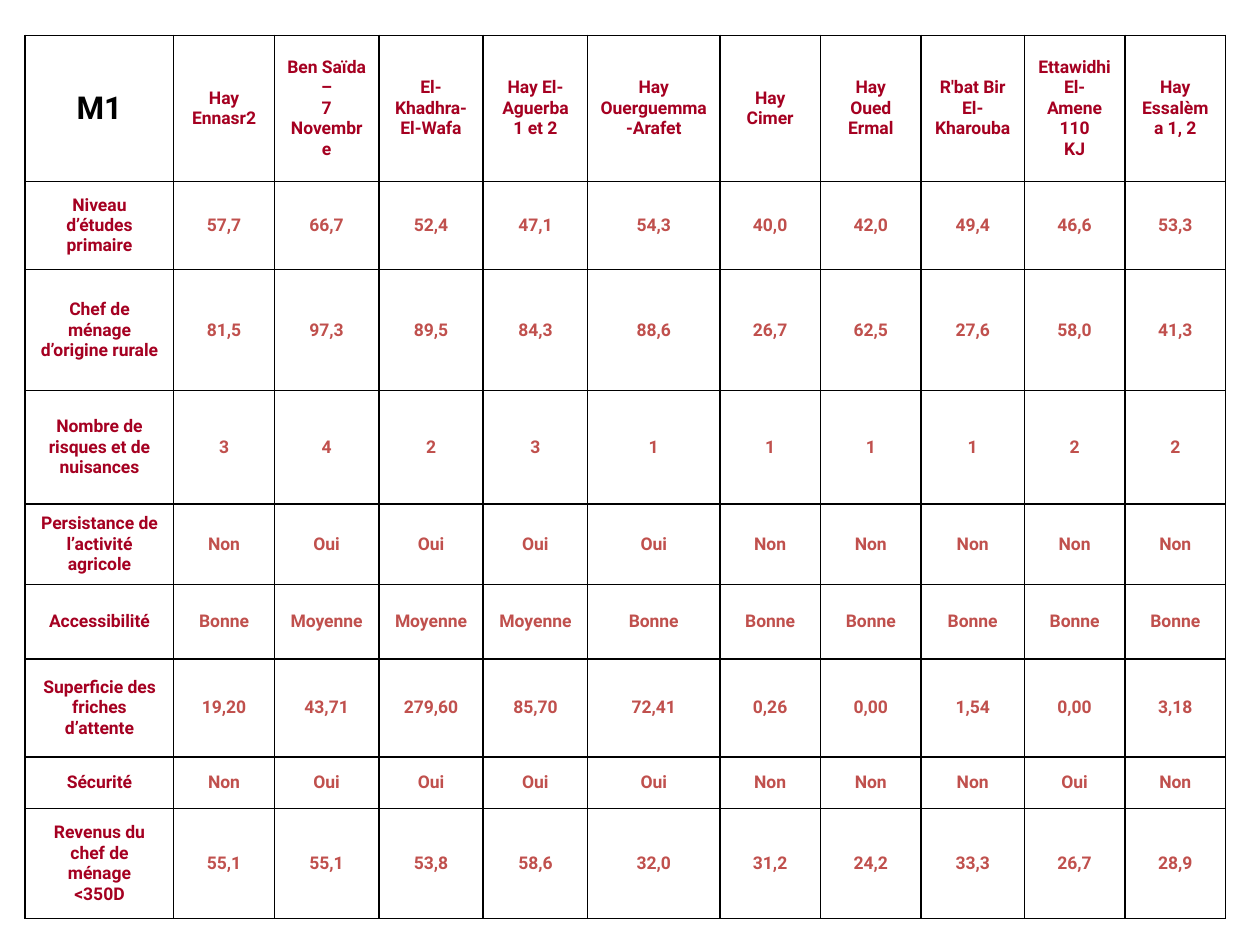
from lxml import etree
from pptx import Presentation
from pptx.dml.color import RGBColor
from pptx.enum.text import MSO_ANCHOR, PP_ALIGN
from pptx.oxml.ns import qn
from pptx.util import Inches, Pt

CENTER = PP_ALIGN.CENTER
MIDDLE = MSO_ANCHOR.MIDDLE
FONT = "Roboto"
COLORS = {"title": "000000", "head": "A50021", "value": "C0504D", "line": "000000"}

WIDTHS = [1.18, 0.8, 0.83, 0.83, 0.83, 1.05, 0.8, 0.8, 0.82, 0.8, 0.8]
HEIGHTS = [1.16, 0.7, 0.96, 0.9, 0.64, 0.59, 0.78, 0.41, 0.87]
AREAS = [
    "M1", "Hay Ennasr2", "Ben Saïda –\n7 Novembre", "El-Khadhra- El-Wafa",
    "Hay El-Aguerba 1 et 2", "Hay Ouerguemma -Arafet", "Hay Cimer",
    "Hay Oued Ermal", "R'bat Bir El-Kharouba", "Ettawidhi\nEl-Amene\n110\nKJ",
    "Hay Essalèma 1, 2",
]
FACTS = {
    "Niveau d’études primaire": "57,7 66,7 52,4 47,1 54,3 40,0 42,0 49,4 46,6 53,3",
    "Chef de ménage d’origine rurale": "81,5 97,3 89,5 84,3 88,6 26,7 62,5 27,6 58,0 41,3",
    "Nombre de risques et de nuisances": "3 4 2 3 1 1 1 1 2 2",
    "Persistance de l’activité agricole": "Non Oui Oui Oui Oui Non Non Non Non Non",
    "Accessibilité": "Bonne Moyenne Moyenne Moyenne Bonne Bonne Bonne Bonne Bonne Bonne",
    "Superficie des friches d’attente": "19,20 43,71 279,60 85,70 72,41 0,26 0,00 1,54 0,00 3,18",
    "Sécurité": "Non Oui Oui Oui Oui Non Non Non Oui Non",
    "Revenus du chef de ménage\n<350D": "55,1 55,1 53,8 58,6 32,0 31,2 24,2 33,3 26,7 28,9",
}


def add_lines(cell):
    props = cell._tc.get_or_add_tcPr()
    for place, side in enumerate(("lnL", "lnR", "lnT", "lnB")):
        line = etree.Element(qn(f"a:{side}"), w=str(Pt(1)))
        fill = etree.SubElement(line, qn("a:solidFill"))
        etree.SubElement(fill, qn("a:srgbClr"), val=COLORS["line"])
        props.insert(place, line)


def fill_cell(cell, text, size, color):
    cell.text_frame.text = text
    cell.vertical_anchor = MIDDLE
    cell.fill.background()
    add_lines(cell)
    for para in cell.text_frame.paragraphs:
        para.alignment = CENTER
        for run in para.runs:
            run.font.name = FONT
            run.font.size = Pt(size)
            run.font.bold = True
            run.font.color.rgb = RGBColor.from_string(COLORS[color])


def add_grid(slide, left, top, width, height):
    rows = [AREAS] + [[name] + values.split() for name, values in FACTS.items()]
    frame = slide.shapes.add_table(
        len(rows), len(AREAS), Inches(left), Inches(top), Inches(width), Inches(height)
    )
    table = frame.table
    table.first_row = False
    table.horz_banding = False
    for col, share in zip(table.columns, WIDTHS):
        col.width = Inches(width * share / sum(WIDTHS))
    for row, share in zip(table.rows, HEIGHTS):
        row.height = Inches(height * share / sum(HEIGHTS))
    for r, texts in enumerate(rows):
        for c, text in enumerate(texts):
            if r == c == 0:
                size, color = 18, "title"
            else:
                size, color = 10, "value" if r and c else "head"
            fill_cell(table.cell(r, c), text, size, color)


def main():
    deck = Presentation()
    deck.slide_width = Inches(10)
    deck.slide_height = Inches(7.5)
    slide = deck.slides.add_slide(deck.slide_layouts[6])
    add_grid(slide, 0.2, 0.28, 9.53, 7.01)
    deck.save("out.pptx")


if __name__ == "__main__":
    main()
